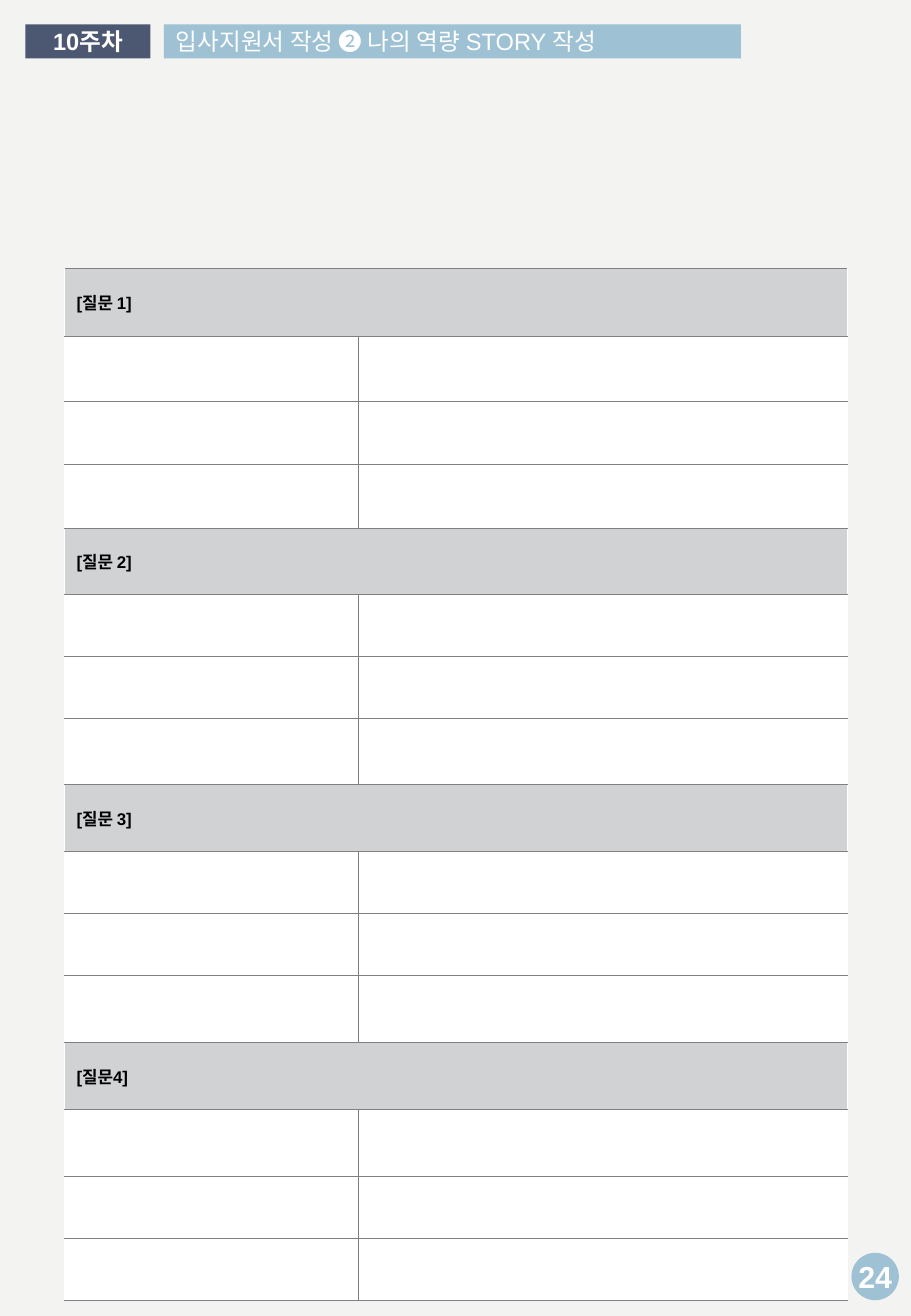
from dataclasses import dataclass

from pptx import Presentation
from pptx import util as u
from pptx.dml.color import RGBColor
from pptx.enum import shapes, text
from pptx.oxml import parse_xml
from pptx.oxml.ns import nsdecls


@dataclass(frozen=True)
class Theme:
    font: str = "Arial"
    page: str = "F3F3F2"
    navy: str = "4C5871"
    sky: str = "9EC1D4"
    white: str = "FFFFFF"
    black: str = "000000"
    band: str = "D1D2D4"
    rule: str = "808080"
    heading: int = 14
    question: int = 10
    page_number: int = 18


T = Theme()
COLS, ROWS = 75, 108.3  # page grid, tenth-of-an-inch squares
CELL = u.Inches(0.1)

QUESTIONS = ["[질문 1]", "[질문 2]", "[질문 3]", "[질문4]"]
COLUMN_WIDTHS = [24.2, 40.3]
# Each block: a question row, then three answer rows
BLOCK_HEIGHTS = [
    [5.6, 5.3, 5.2, 5.3],
    [5.4, 5.1, 5.1, 5.5],
    [5.5, 5.1, 5.1, 5.5],
    [5.5, 5.5, 5.1, 5.1],
]


def grid(*units):
    return [round(n * CELL) for n in units]


def paint(item, color):
    item.fill.solid()
    item.fill.fore_color.rgb = RGBColor.from_string(color)


def write(tf, words, size, color, bold=False, align=text.PP_ALIGN.LEFT):
    p = tf.paragraphs[0]
    p.alignment = align
    r = p.add_run()
    r.text = words
    for name, value in dict(name=T.font, size=u.Pt(size), bold=bold).items():
        setattr(r.font, name, value)
    r.font.color.rgb = RGBColor.from_string(color)


def add_label(s, preset, box, fill, words, size, **style):
    """Filled shape with one line of white text."""
    sp = s.shapes.add_shape(preset, *grid(*box))
    sp.shadow.inherit = False
    paint(sp, fill)
    sp.line.fill.background()
    tf = sp.text_frame
    frame = dict(margin_top=0, margin_bottom=0, word_wrap=False,
                 vertical_anchor=text.MSO_ANCHOR.MIDDLE)
    for name, value in frame.items():
        setattr(tf, name, value)
    write(tf, words, size, T.white, **style)


def set_borders(cell, left, right):
    sides = dict(L=left, R=right, T=(T.rule, 0.5), B=(T.rule, 0.5))
    for side, (color, width) in sides.items():
        cell._tc.get_or_add_tcPr().append(parse_xml(
            f'<a:ln{side} {nsdecls("a")} w="{u.Pt(width)}"><a:solidFill>'
            f'<a:srgbClr val="{color}"/></a:solidFill></a:ln{side}>'))


def add_question_table(s, left, top):
    heights = sum(BLOCK_HEIGHTS, [])
    box = grid(left, top, sum(COLUMN_WIDTHS), sum(heights))
    table = s.shapes.add_table(len(heights), len(COLUMN_WIDTHS), *box).table
    table.first_row = table.horz_banding = False
    for column, width in zip(table.columns, grid(*COLUMN_WIDTHS)):
        column.width = width
    for row, height in zip(table.rows, grid(*heights)):
        row.height = height

    edge, rule = (T.white, 1), (T.rule, 0.5)
    block = len(BLOCK_HEIGHTS[0])
    for i in range(len(heights)):
        is_question = i % block == 0
        first, last = table.cell(i, 0), table.cell(i, 1)
        middle = edge if is_question else rule
        set_borders(first, edge, middle)
        set_borders(last, middle, edge)
        for cell in (first, last):
            paint(cell, T.band if is_question else T.white)
        if is_question:
            first.merge(last)
            first.vertical_anchor = text.MSO_ANCHOR.MIDDLE
            write(first.text_frame, QUESTIONS[i // block],
                  T.question, T.black, bold=True)


def main():
    prs = Presentation()
    prs.slide_width, prs.slide_height = grid(COLS, ROWS)
    s = prs.slides.add_slide(prs.slide_layouts[6])
    paint(s.background, T.page)
    rect, oval = shapes.MSO_SHAPE.RECTANGLE, shapes.MSO_SHAPE.OVAL
    centred = dict(bold=True, align=text.PP_ALIGN.CENTER)

    # Heading: week and topic
    add_label(s, rect, (13.5, 2, 47.5, 2.8), T.sky,
              "입사지원서 작성 ❷ 나의 역량 STORY 작성", T.heading)
    add_label(s, rect, (2.1, 2, 10.3, 2.8), T.navy,
              "10주차", T.heading, **centred)

    # Question sheet
    add_question_table(s, 5.3, 22.1)

    # Page number
    add_label(s, oval, (70.1, 103.1, 3.9, 3.9), T.sky,
              "24", T.page_number, **centred)

    prs.save("out.pptx")


if __name__ == "__main__":
    main()
